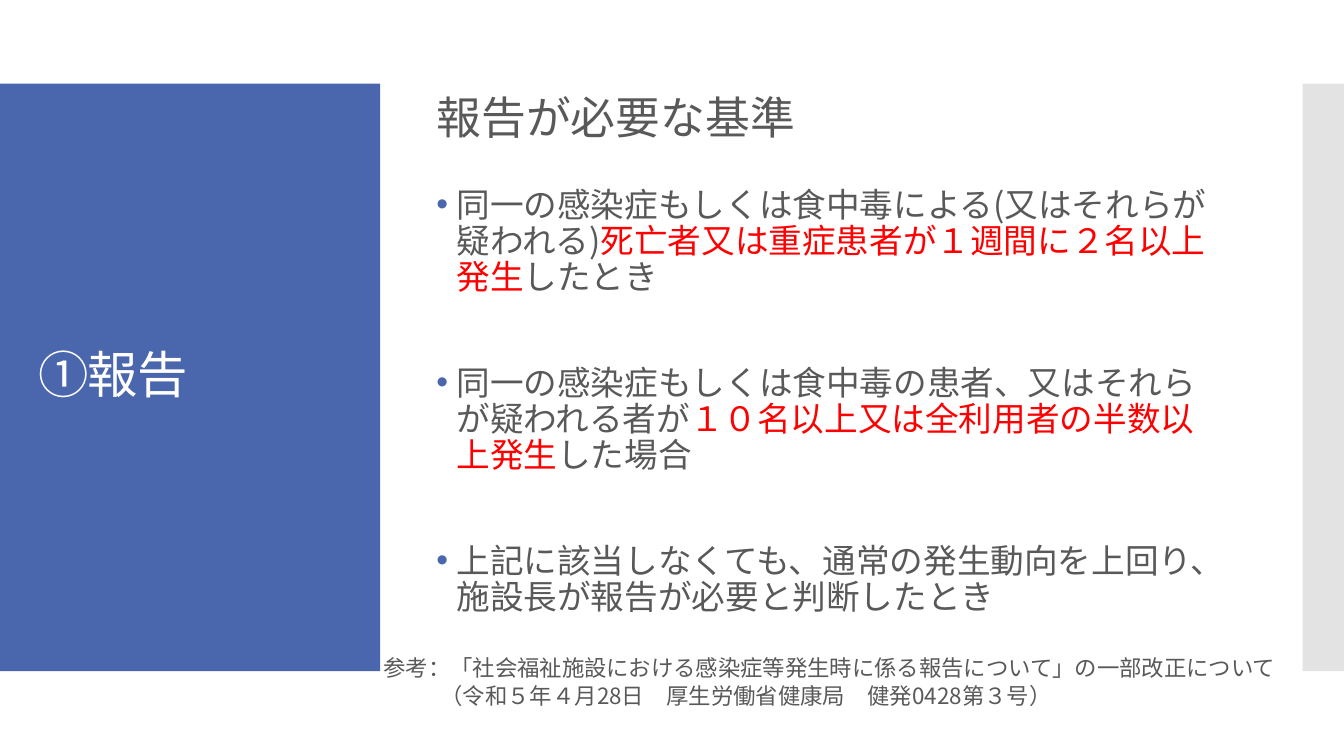
from lxml import etree
from pptx import Presentation
from pptx import util as u
from pptx.dml.color import RGBColor
from pptx.enum import shapes, text
from pptx.oxml.ns import qn

FONT = "Noto Sans CJK JP"
COLORS = {"blue": "4A66AC", "side": "C8C8C8", "body": "595959", "alert": "FF0000", "white": "FFFFFF"}

prs = Presentation()
prs.slide_width, prs.slide_height = u.Inches(13.33), u.Inches(7.5)
s = prs.slides.add_slide(prs.slide_layouts[5])


def box(left, top, width, height):
    return [u.Inches(v) for v in (left, top, width, height)]


def write(sp, paragraphs, size, align=text.PP_ALIGN.LEFT, **spacing):
    tf = sp.text_frame
    frame = {"word_wrap": True, "auto_size": text.MSO_AUTO_SIZE.NONE,
             "vertical_anchor": text.MSO_ANCHOR.MIDDLE}
    for name, value in frame.items():
        setattr(tf, name, value)
    for i, runs in enumerate(paragraphs):
        p = tf.add_paragraph() if i else tf.paragraphs[0]
        for name, value in {"alignment": align, "space_before": u.Pt(0), **spacing}.items():
            setattr(p, name, value)
        for words, color in runs:
            r = p.add_run()
            r.text = words
            for name, value in {"name": FONT, "size": u.Pt(size), "bold": False}.items():
                setattr(r.font, name, value)
            r.font.color.rgb = RGBColor.from_string(COLORS[color])
            etree.SubElement(r.font._element, qn("a:ea"), typeface=FONT)
    return tf


bands = [(0, 3.77, "blue", 100), (12.92, 0.41, "side", 50)]
for i, (left, width, color, opacity) in enumerate(bands):
    sp = s.shapes.add_shape(shapes.MSO_SHAPE.RECTANGLE, *box(left, 0.83, width, 5.83))
    sp.shadow.inherit = False
    sp.fill.solid()
    sp.fill.fore_color.rgb = RGBColor.from_string(COLORS[color])
    sp.line.fill.background()
    if opacity < 100:
        fill = sp.fill._xPr.find(qn("a:solidFill"))
        etree.SubElement(fill[0], qn("a:alpha"), val=str(opacity * 1000))
    s.shapes._spTree.insert(2 + i, sp._element)

title = s.shapes.title
title.left, title.top, title.width, title.height = box(0.28, 1.23, 3.22, 5.03)
tf = write(title, [[("①報告", "white")]], 36, line_spacing=0.9)
tf.paragraphs[0].runs[0].font._element.set("spc", "-60")

heading = s.shapes.add_textbox(*box(4.23, 0.81, 8, 0.76))
write(heading, [[("報告が必要な基準", "body")]], 32, line_spacing=0.9)

criteria = [
    [("同一の感染症もしくは食中毒による(又はそれらが疑われる)", "body"),
     ("死亡者又は重症患者が１週間に２名以上発生", "alert"), ("したとき", "body")],
    [("同一の感染症もしくは食中毒の患者、又はそれらが疑われる者が", "body"),
     ("１０名以上又は全利用者の半数以上発生", "alert"), ("した場合", "body")],
    [("上記に該当しなくても、通常の発生動向を上回り、施設長が報告が必要と判断したとき", "body")],
]
tf = write(s.shapes.add_textbox(*box(4.23, 1.19, 8, 5.6)), criteria, 24, line_spacing=u.Pt(25.8))
for i, p in enumerate(tf.paragraphs):
    p.space_before = u.Pt(50 if i else 0)
    pPr = p._p.get_or_add_pPr()
    pPr.set("marL", str(u.Inches(0.2)))
    pPr.set("indent", str(-u.Inches(0.2)))
    color = etree.SubElement(pPr, qn("a:buClr"))
    etree.SubElement(color, qn("a:srgbClr"), val=COLORS["blue"])
    etree.SubElement(pPr, qn("a:buFont"), typeface="Arial")
    etree.SubElement(pPr, qn("a:buChar"), char="•")

references = [
    ((3.59, 6.5, 9.28, 0.24), "参考：「社会福祉施設における感染症等発生時に係る報告について」の一部改正について"),
    ((4.08, 6.73, 6.64, 0.34), "（令和５年４月28日　厚生労働省健康局　健発0428第３号）"),
]
for place, words in references:
    sp = s.shapes.add_shape(shapes.MSO_SHAPE.ROUNDED_RECTANGLE, *box(*place))
    sp.shadow.inherit = False
    sp.fill.background()
    sp.line.fill.background()
    write(sp, [[(words, "body")]], 16, text.PP_ALIGN.CENTER)

prs.save("out.pptx")
